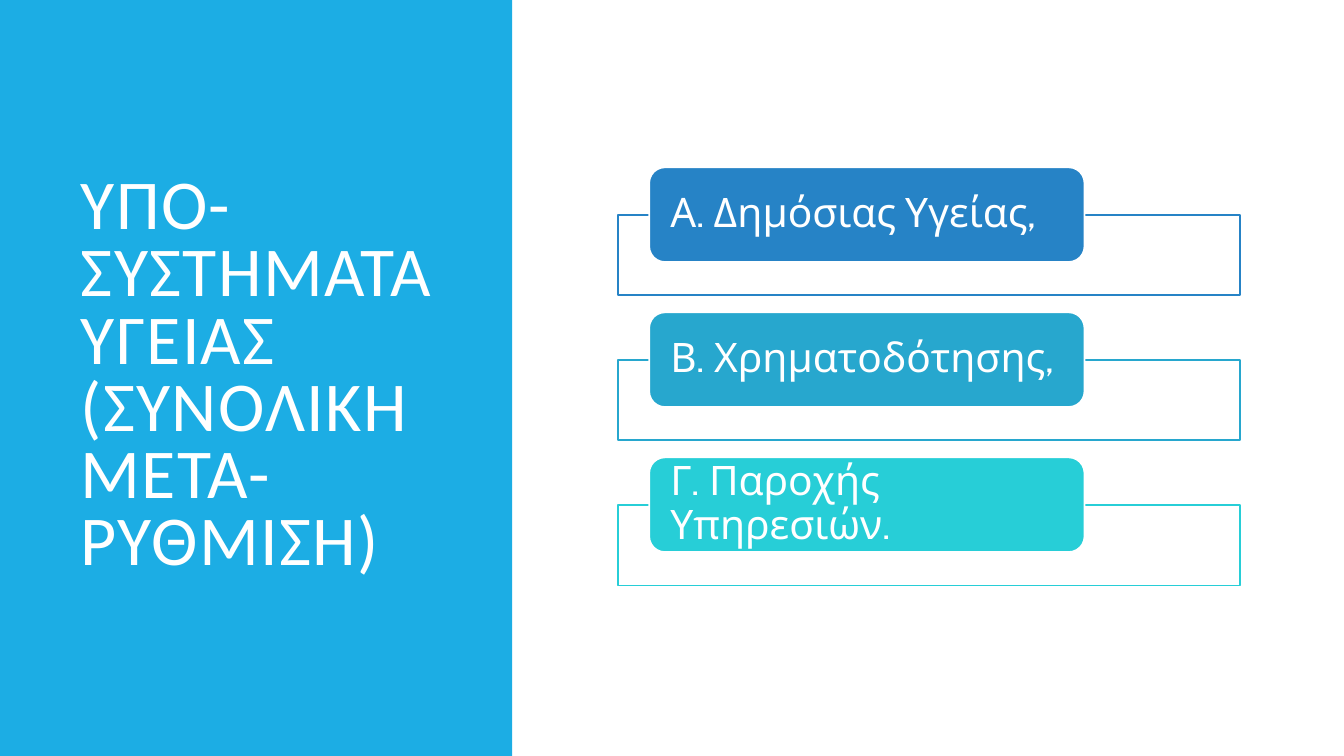
from pptx import Presentation
from pptx.dml.color import RGBColor
from pptx.enum.shapes import MSO_SHAPE
from pptx.enum.text import MSO_ANCHOR, MSO_AUTO_SIZE, PP_ALIGN
from pptx.util import Pt

RECT = MSO_SHAPE.RECTANGLE
ROUND = MSO_SHAPE.ROUNDED_RECTANGLE
MIDDLE = MSO_ANCHOR.MIDDLE
LEFT = PP_ALIGN.LEFT
NO_FIT = MSO_AUTO_SIZE.NONE

WHITE = "FFFFFF"
PITCH = 103.6
ITEMS = [
    ("Α. Δημόσιας Υγείας,", "2683C6"),
    ("Β. Χρηματοδότησης,", "27A7CE"),
    ("Γ. Παροχής Υπηρεσιών.", "27CED7"),
]


def paint(part, color):
    part.solid()
    part.fore_color.rgb = RGBColor.from_string(color)


def add_box(kind, left, top, width, height, fill, line=None):
    box = slide.shapes.add_shape(kind, Pt(left), Pt(top), Pt(width), Pt(height))
    box.shadow.inherit = False
    paint(box.fill, fill)
    if line:
        paint(box.line.fill, line)
        box.line.width = Pt(1.25)
    else:
        box.line.fill.background()
    return box


prs = Presentation()
prs.slide_width = Pt(960)
prs.slide_height = Pt(540)
slide = prs.slides.add_slide(prs.slide_layouts[5])

panel = add_box(RECT, 0, 0, 365.8, 540, "1CADE4")
slide.shapes._spTree.insert(2, panel._element)

title = slide.shapes.title
title.left, title.top = Pt(50.4), Pt(50.4)
title.width, title.height = Pt(269.3), Pt(438.5)
frame = title.text_frame
frame.word_wrap = True
frame.auto_size = NO_FIT
frame.vertical_anchor = MIDDLE
para = frame.paragraphs[0]
para.alignment = LEFT
para.line_spacing = 0.8
for row, text in enumerate(["ΥΠΟ-ΣΥΣΤΗΜΑΤΑ ΥΓΕΙΑΣ", "(ΣΥΝΟΛΙΚΗ ΜΕΤΑ-ΡΥΘΜΙΣΗ)"]):
    if row:
        para.add_line_break()
    run = para.add_run()
    run.text = text
    run.font.name = "Calibri"
    run.font.size = Pt(50)
    paint(run.font.fill, WHITE)
    run.font._element.set("spc", "100")

for row, (text, color) in enumerate(ITEMS):
    shift = row * PITCH
    add_box(RECT, 441.4, 153.4 + shift, 444.2, 57.6, WHITE, color)
    label = add_box(ROUND, 463.7, 119.5 + shift, 311, 67.7, color, WHITE)
    frame = label.text_frame
    frame.word_wrap = True
    frame.vertical_anchor = MIDDLE
    frame.margin_left = frame.margin_right = Pt(11.8)
    frame.margin_top = frame.margin_bottom = 0
    para = frame.paragraphs[0]
    para.alignment = LEFT
    para.line_spacing = 0.9
    run = para.add_run()
    run.text = text
    run.font.name = "Cabin"
    run.font.size = Pt(29)
    paint(run.font.fill, WHITE)

prs.save("out.pptx")
